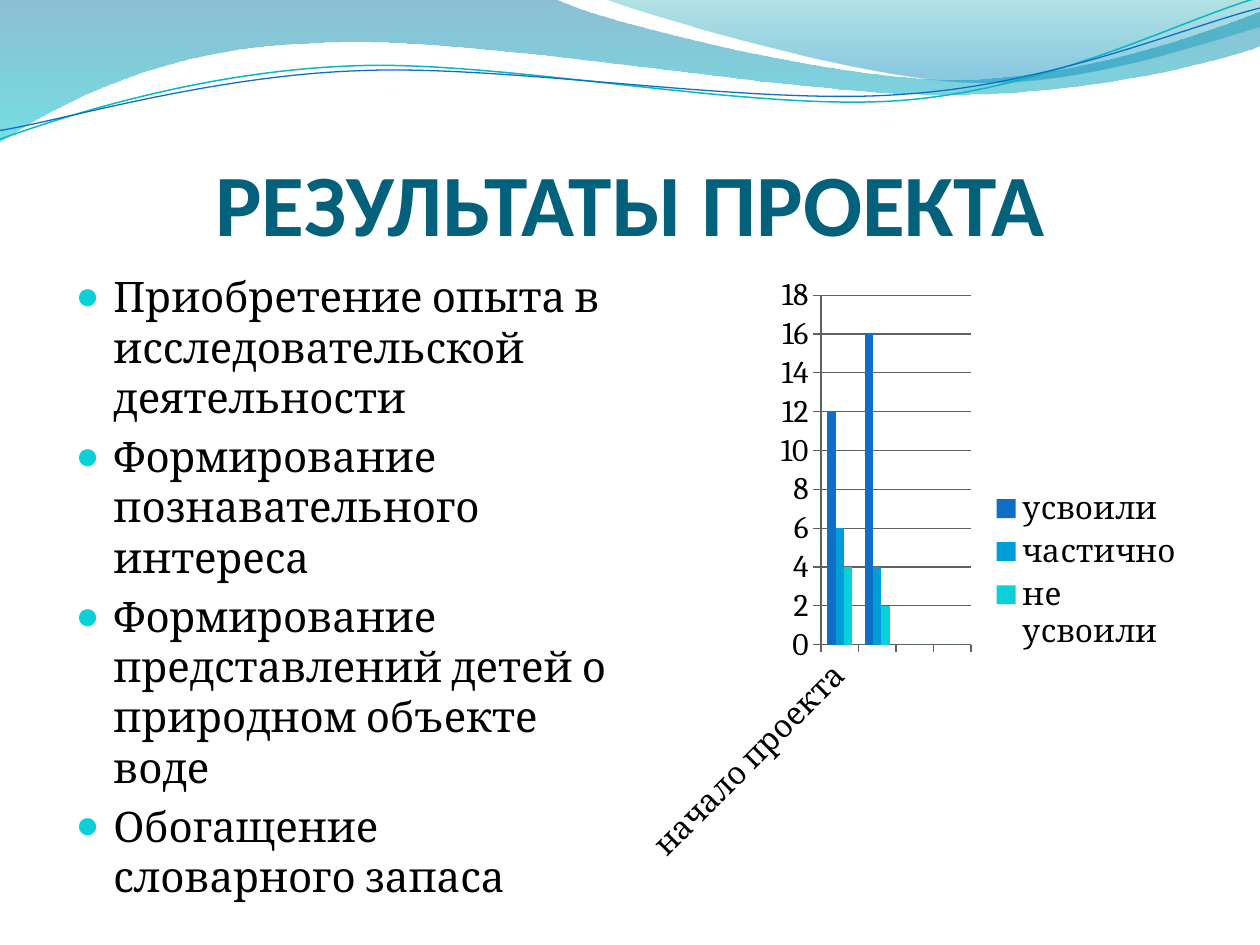
from lxml import etree
from pptx import Presentation
from pptx.chart.data import CategoryChartData
from pptx.dml.color import RGBColor
from pptx.enum.chart import XL_CHART_TYPE, XL_LEGEND_POSITION, XL_TICK_MARK
from pptx.enum.text import MSO_ANCHOR, MSO_AUTO_SIZE, PP_ALIGN
from pptx.oxml.ns import qn
from pptx.util import Inches, Pt

COLUMNS = XL_CHART_TYPE.COLUMN_CLUSTERED
RIGHT = XL_LEGEND_POSITION.RIGHT
OUTSIDE = XL_TICK_MARK.OUTSIDE
TOP, BOTTOM = MSO_ANCHOR.TOP, MSO_ANCHOR.BOTTOM
NO_FIT = MSO_AUTO_SIZE.NONE
CENTER = PP_ALIGN.CENTER


def color(value):
    return RGBColor.from_string(value)


def add_curve(page, start, segments, close):
    points = [(Inches(x), Inches(y)) for segment in segments
              for x, y in zip(segment[::2], segment[1::2])]
    builder = page.shapes.build_freeform(Inches(start[0]), Inches(start[1]))
    builder.add_line_segments(points, close=close)
    shape = builder.convert_to_shape()
    shape.shadow.inherit = False
    steps = iter(list(shape.element.iter(qn("a:lnTo"))))
    for segment in segments:
        first = next(steps)
        if len(segment) == 6:
            first.tag = qn("a:cubicBezTo")
            for _ in range(2):
                step = next(steps)
                first.append(step[0])
                step.getparent().remove(step)
    return shape


deck = Presentation()
deck.slide_width, deck.slide_height = Inches(10), Inches(7.5)
page = deck.slides.add_slide(deck.slide_layouts[1])

waves = [
    ((0, 0), [(4.4, -0.01), (4.76, 0.17, 6.64, 0.63, 7.58, 0.63),
              (8.53, 0.63, 9.58, 0.26, 10, 0.09), (10.01, 0.36),
              (9.83, 0.44, 8.7, 0.76, 7.46, 0.75), (6.22, 0.75, 3.82, 0.28, 2.57, 0.34),
              (1.29, 0.36, 0.46, 0.83, -0.01, 1.13)],
     [(0, "0074A1", 45), (1, "00C6CF", 55)]),
    ((4.79, -0.01), [(5.09, 0.11, 6.82, 0.62, 7.69, 0.65),
                     (8.56, 0.69, 9.61, 0.32, 10, 0.21), (10, 0)],
     [(0, "00A1A9", 30), (0.8, "008BBF", 45)]),
]
for start, segments, stops in waves:
    wave = add_curve(page, start, segments, True)
    wave.line.fill.background()
    wave.fill.gradient()
    wave.fill.gradient_angle = 270
    for stop, (position, tint, _) in zip(wave.fill.gradient_stops, stops):
        stop.position = position
        stop.color.rgb = color(tint)
    for tint, (_, _, opacity) in zip(wave.element.iter(qn("a:srgbClr")), stops):
        etree.SubElement(tint, qn("a:alpha"), val=str(opacity * 1000))

strands = [
    ((-0.02, 0.87), [(0.47, 0.72, 1.58, 0.41, 2.78, 0.42), (3.96, 0.42, 5.91, 0.93, 7.12, 0.9),
                     (8.32, 0.87, 9.4, 0.36, 10, 0.22)], "0AB8BF", 0.85),
    ((-0.02, 0.8), [(0.46, 0.75, 1.64, 0.45, 2.83, 0.46), (4.03, 0.46, 5.96, 0.89, 7.16, 0.85),
                    (8.35, 0.83, 9.42, 0.42, 10.02, 0.3)], "0F6FC6", 0.75),
]
for start, segments, tint, width in strands:
    strand = add_curve(page, start, segments, False)
    strand.rotation = 357.3
    strand.fill.background()
    strand.line.color.rgb = color(tint)
    strand.line.width = Pt(width)

results = [
    "Приобретение опыта в исследовательской деятельности",
    "Формирование познавательного интереса",
    "Формирование представлений детей о природном объекте воде",
    "Обогащение словарного запаса",
]
title, body = page.shapes.title, page.placeholders[1]
texts = [
    (title, ["РЕЗУЛЬТАТЫ ПРОЕКТА"], (0.5, 0.77, 9, 1.25), "04617B",
     {"vertical_anchor": BOTTOM, "margin_left": 0, "margin_right": 0, "margin_bottom": 0},
     {"name": "Calibri", "size": Pt(50), "bold": True}),
    (body, results, (0.5, 2.1, 4.42, 4.85), "000000",
     {"vertical_anchor": TOP},
     {"name": "Cambria", "size": Pt(24)}),
]
for box, lines, place, tint, frame_format, font_format in texts:
    box.element.getparent().append(box.element)
    box.left, box.top, box.width, box.height = map(Inches, place)
    frame = box.text_frame
    frame.text = "\n".join(lines)
    frame.auto_size = NO_FIT
    frame.word_wrap = True
    for name, value in frame_format.items():
        setattr(frame, name, value)
    for para in frame.paragraphs:
        span = para.runs[0]
        span.font.color.rgb = color(tint)
        for name, value in font_format.items():
            setattr(span.font, name, value)

title.text_frame.paragraphs[0].alignment = CENTER
for para in body.text_frame.paragraphs:
    para.space_before = Pt(4.8)
    layout = para._p.get_or_add_pPr()
    layout.set("marL", str(Inches(0.3)))
    layout.set("indent", str(-Inches(0.3)))
    bullet_color = etree.SubElement(layout, qn("a:buClr"))
    etree.SubElement(bullet_color, qn("a:srgbClr"), val="0BD0D9")
    etree.SubElement(layout, qn("a:buSzPct"), val="95000")
    etree.SubElement(layout, qn("a:buChar"), char="●")

series = [
    ("усвоили", (12, 16, 0, 0), "0F6FC6"),
    ("частично", (6, 4, 0, 0), "009DD9"),
    ("не усвоили", (4, 2, 0, 0), "0BD0D9"),
]
data = CategoryChartData()
data.categories = ["начало проекта", "конец проекта", " ", " "]
for name, values, _ in series:
    data.add_series(name, values)
chart = page.shapes.add_chart(COLUMNS, Inches(5.08), Inches(2.1),
                              Inches(4.42), Inches(4.85), data).chart
chart.has_title = False
chart.has_legend = True
chart.legend.position = RIGHT
chart.legend.include_in_layout = False
chart.font.name = "Cambria"
chart.font.size = Pt(18)
chart.font.color.rgb = color("000000")
plot = chart.plots[0]
plot.gap_width = 150
plot.overlap = 0
plot.vary_by_categories = False
for bars, (_, _, tint) in zip(plot.series, series):
    bars.format.fill.solid()
    bars.format.fill.fore_color.rgb = color(tint)
chart.value_axis.has_major_gridlines = True
for axis in (chart.category_axis, chart.value_axis):
    axis.major_tick_mark = OUTSIDE
for part in (chart.category_axis, chart.value_axis, chart.value_axis.major_gridlines):
    part.format.line.color.rgb = color("606060")

deck.save("out.pptx")
